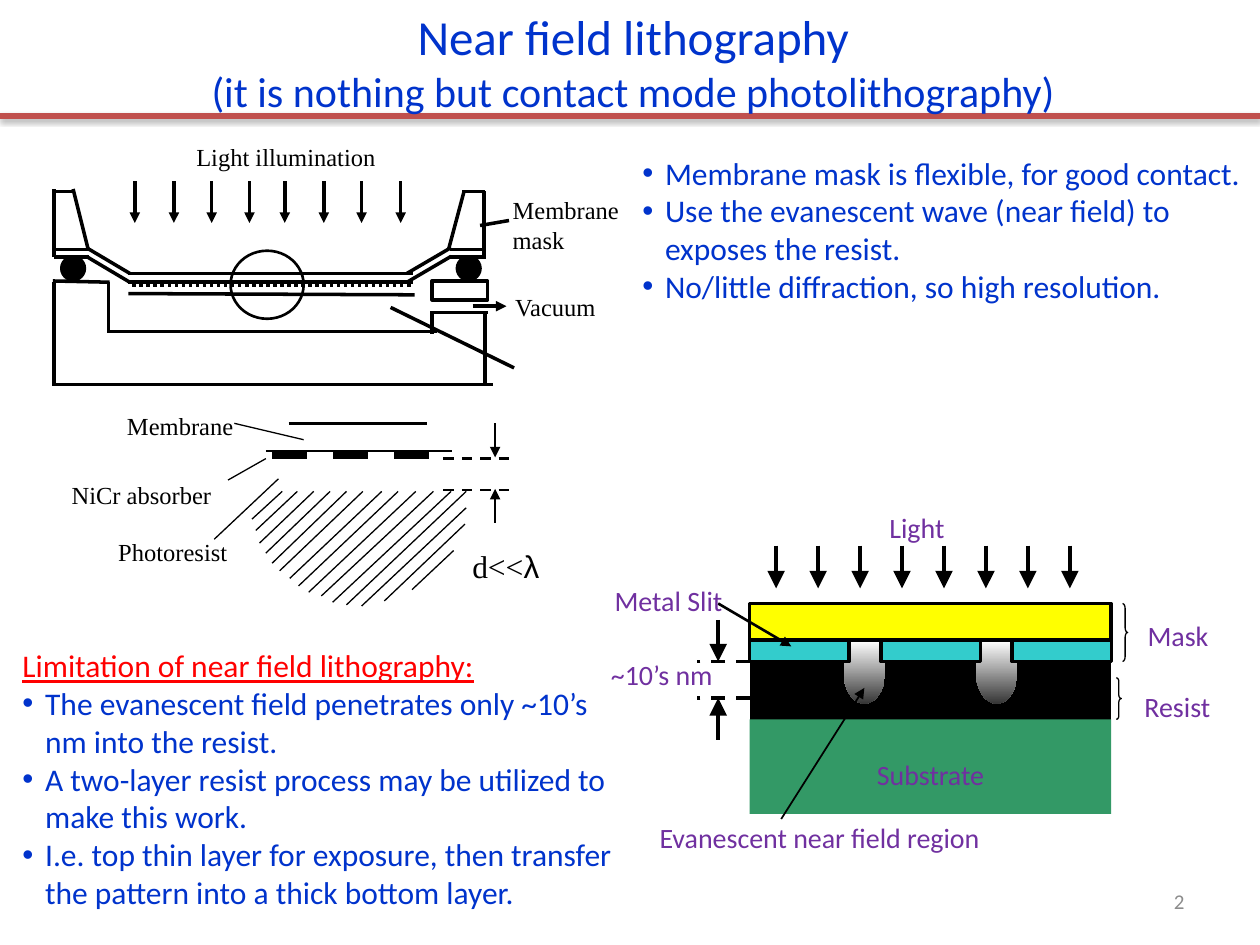
"""Builds the near field lithography slide on a grid of 100 columns by 75 rows."""
from lxml import etree
from pptx import Presentation
from pptx.dml.color import RGBColor
from pptx.enum.dml import MSO_LINE
from pptx.enum.shapes import MSO_CONNECTOR, MSO_SHAPE
from pptx.enum.text import MSO_ANCHOR, PP_ALIGN
from pptx.oxml.ns import qn
from pptx.util import Inches, Pt

RECT, OVAL = MSO_SHAPE.RECTANGLE, MSO_SHAPE.OVAL
DELAY, BRACE = MSO_SHAPE.FLOWCHART_DELAY, MSO_SHAPE.RIGHT_BRACE
STRAIGHT = MSO_CONNECTOR.STRAIGHT
DASH, DOT = MSO_LINE.DASH, MSO_LINE.ROUND_DOT
LEFT, CENTER, RIGHT, JUSTIFY = PP_ALIGN.LEFT, PP_ALIGN.CENTER, PP_ALIGN.RIGHT, PP_ALIGN.JUSTIFY
TOP, MIDDLE = MSO_ANCHOR.TOP, MSO_ANCHOR.MIDDLE

COLORS = {"black": "000000", "white": "FFFFFF", "blue": "0033CC", "purple": "7030A0",
          "red": "FF0000", "rule": "C0504D", "yellow": "FFFF00", "teal": "33CCCC",
          "green": "339966", "dark": "363636", "gray": "8C8C8C"}
SERIF = {"size": 14, "name": "Times New Roman", "color": "black"}
LABEL = {"size": 16, "name": "Calibri", "color": "purple"}
BODY = {"size": 18, "name": "Calibri", "color": "blue"}


def rgb(name):
    return RGBColor.from_string(COLORS[name])


class Sketch:
    """Draws styled elements on the current slide in grid units."""

    def __init__(self, prs, cols=100, rows=75):
        self.s = prs.slides.add_slide(prs.slide_layouts[6])
        self.cw, self.rh = prs.slide_width / cols, prs.slide_height / rows

    def grid(self, *values):
        return [round(v * (self.rh if i % 2 else self.cw)) for i, v in enumerate(values)]

    def line(self, *ends, width=2, color="black", dash=None, head=None, shadow=False):
        sp = self.s.shapes.add_connector(STRAIGHT, *self.grid(*ends))
        sp.line.width, sp.line.color.rgb = Pt(width), rgb(color)
        if dash:
            sp.line.dash_style = dash
        pr = sp._element.spPr
        if head:
            etree.SubElement(pr.find(qn("a:ln")), qn("a:tailEnd"), type="triangle", w=head, len=head)
        effects = etree.SubElement(pr, qn("a:effectLst"))
        if shadow:
            sh = etree.SubElement(effects, qn("a:outerShdw"), blurRad="40000", dist="20000",
                                  dir="5400000", rotWithShape="0")
            clr = etree.SubElement(sh, qn("a:srgbClr"), val=COLORS["black"])
            etree.SubElement(clr, qn("a:alpha"), val="38000")

    def lines(self, ends, **style):
        for e in ends:
            self.line(*e, **style)

    def shape(self, kind, *box, fill=None, width=None, rotation=0, adj=()):
        sp = self.s.shapes.add_shape(kind, *self.grid(*box))
        sp.shadow.inherit, sp.rotation = False, rotation
        for i, value in enumerate(adj):
            sp.adjustments[i] = value
        if isinstance(fill, tuple):
            sp.fill.gradient()
            sp.fill.gradient_angle = 0
            for stop, name in zip(sp.fill.gradient_stops, fill):
                stop.color.rgb = rgb(name)
        elif fill:
            sp.fill.solid()
            sp.fill.fore_color.rgb = rgb(fill)
        else:
            sp.fill.background()
        if width:
            sp.line.width, sp.line.color.rgb = Pt(width), rgb("black")
        else:
            sp.line.fill.background()

    def text(self, box, paragraphs, style, align=LEFT, wrap=True, anchor=TOP, bullets=False):
        tf = self.s.shapes.add_textbox(*self.grid(*box)).text_frame
        tf.word_wrap, tf.vertical_anchor = wrap, anchor
        for i, runs in enumerate(paragraphs):
            p = tf.add_paragraph() if i else tf.paragraphs[0]
            p.alignment = align
            for words, change in [(runs, {})] if isinstance(runs, str) else runs:
                r = p.add_run()
                r.text = words
                fmt = {**style, **change}
                r.font.color.rgb = rgb(fmt.pop("color"))
                fmt["size"] = Pt(fmt["size"])
                for key, value in fmt.items():
                    setattr(r.font, key, value)
            if bullets:
                pr = p._p.get_or_add_pPr()
                pr.set("marL", str(Inches(0.18)))
                pr.set("indent", str(-Inches(0.18)))
                if isinstance(runs, str):
                    etree.SubElement(pr, qn("a:buFont"), typeface="Arial")
                    etree.SubElement(pr, qn("a:buChar"), char="•")


def mask_detail(d):
    d.lines([(22.9, 33.6, 33.9, 33.6), (21.1, 35.8, 35.9, 35.8)], width=1.5)
    d.lines([(35.2, y, 40.6, y) for y in (36.4, 38.9)], width=1.5, dash=DASH)
    d.lines([(39.3, 41.5, 39.3, 38.8), (39.3, 33.6, 39.3, 36.3)], width=1.5, head="med")
    d.line(21.6, 36.1, 35.1, 36.1, width=5, dash=DASH)
    d.lines([(24.1, 34.9, 18.6, 33.6), (22.1, 38, 17, 42.8), (18.1, 38.1, 21.1, 36.4)], width=0.75)
    tops = (22.4, 23.6, 24.9, 26.2, 27.5, 28.8, 30.3, 31.6, 33, 34.4, 35.8, 37)
    feet = ((20, 41.2), (20.3, 42.1), (20.6, 43.1), (21.1, 43.9), (21.6, 44.7), (22.2, 45.3),
            (23, 45.9), (23.7, 46.5), (24.5, 47), (25.5, 47.3), (26.4, 47.8), (27.5, 48))
    d.lines([(x, 39, *foot) for x, foot in zip(tops, feet)], width=0.75)
    d.lines([(37, 40.3, 28.7, 48.1), (36.9, 41.6, 30.5, 47.7), (36, 43.7, 32.7, 46.8)], width=0.75)
    d.text((36.5, 42.9, 7.4, 4), [[("d<<", {}), ("λ", {"name": "Arial"})]], {**SERIF, "size": 18},
           wrap=False)


def exposure_setup(d):
    d.lines([(8.6, 26.3, 34.7, 26.3), (34.3, 26.5, 34.3, 24.7), (34.3, 24.8, 38.7, 24.8),
             (8.6, 26.4, 8.6, 22.4), (38.5, 24.8, 38.5, 30.6), (4.3, 22.4, 4.3, 30.6),
             (4.2, 22.3, 8.7, 22.4), (4.2, 30.5, 39.1, 30.5), (10.2, 23.3, 32.9, 23.4)])
    for y in (20.4, 19.7):
        edge = max(y, 19.8)
        d.lines([(10.2, y + 2, 32.8, y + 2), (32.3, y + 2, 35.8, y - 0.05),
                 (35.7, edge, 38.6, edge), (10.3, y + 2, 6.85, y - 0.05), (4.3, edge, 7.1, edge)])
    d.lines([(38.4, 20.4, 38.4, 15.2), (4.3, 20.4, 4.3, 15), (4.4, 15.2, 5.9, 15.2),
             (36.7, 15.2, 38.5, 15.2), (36.8, 15.3, 35.6, 19.8), (7, 19.8, 5.8, 15),
             (38.1, 17.9, 40.4, 17.5), (31, 24.4, 40.8, 29.2)])
    d.line(10.5, 22.6, 32.7, 22.6, dash=DOT)
    for x in (4.9, 36.3):
        d.shape(OVAL, x, 20.4, 1.8, 1.8, fill="black", width=2)
    d.shape(OVAL, 18.3, 19.9, 5.8, 5.4, width=1.5)
    d.shape(RECT, 34.3, 22.3, 4.4, 1.5, fill="white", width=2)
    d.line(37.5, 24.3, 40.2, 24.3, head="med")
    d.lines([(x, 14.4, x, 17.7) for x in (10.7, 13.8, 16.8, 19.8, 22.6, 25.7, 28.7, 31.8)], head="med")


def resist_stack(d):
    d.lines([(61.6 + 3.33 * i, 43.3, 61.6 + 3.33 * i, 46.7) for i in range(8)], head="lg")
    d.line(59.5, 55.4, 88.2, 55.4, width=42.5)
    d.lines([(59.5, y, 55.3, y) for y in (52.5, 55.4)], dash=DASH)
    d.lines([(57, 49.2, 57, 52.5), (57, 58.7, 57, 55.4)], head="lg")
    d.shape(RECT, 59.5, 57.1, 28.7, 7.5, fill="green")
    for x in (66.1, 76.6):
        d.shape(DELAY, x, 51.7, 5, 3.3, fill=("white", "dark"), rotation=90)
    d.line(62, 65, 68.6, 54.6, width=1, head="med")
    d.shape(RECT, 59.5, 47.9, 28.7, 2.9, fill="yellow", width=2)
    for x in (59.5, 69.9, 80.3):
        d.shape(RECT, x, 50.8, 7.9, 1.7, fill="teal", width=2)
    d.line(57, 47.9, 62.8, 51.3, width=1.5, head="med")
    d.shape(BRACE, 89.1, 47.9, 0.4, 4.6, width=0.75, adj=(0.92, 0.5))
    d.shape(BRACE, 88.6, 53.8, 0.4, 3.3, width=0.75, adj=(0.67, 0.5))


def words(d):
    for box, label in [((9.1, 32.1, 15.7, 5.2), "Membrane"), ((8.4, 42.1, 15.3, 6), "Photoresist"),
                       ((4.7, 37.6, 15.7, 5), "NiCr absorber"), ((39.9, 22.7, 8.9, 4.9), "Vacuum"),
                       ((39.7, 15, 12.1, 7.3), "Membrane mask"),
                       ((14.6, 10.8, 24.7, 4.2), "Light illumination")]:
        d.text(box, [label], SERIF, JUSTIFY)
    for box, label, align in [((69.6, 40, 8.2, 3.7), "Light", LEFT),
                              ((47.5, 51.7, 10.8, 3.7), "~10’s nm", LEFT),
                              ((47.8, 45.8, 11.6, 6.4), "Metal Slit", LEFT),
                              ((90.1, 48.6, 7.3, 3.7), "Mask", LEFT),
                              ((88.6, 54.2, 9.7, 3.7), "Resist", CENTER),
                              ((67.4, 59.6, 12.9, 3.7), "Substrate", CENTER),
                              ((51.1, 64.6, 27.9, 3.7), "Evanescent near field region", CENTER)]:
        d.text(box, [label], LABEL, align)
    d.text((15.5, 0, 69.5, 9.8),
           [[("Near field lithography", {"size": 28})],
            "(it is nothing but contact mode photolithography)"],
           {**BODY, "size": 24}, CENTER, wrap=False)
    d.text((50, 11.7, 50, 13.1),
           ["Membrane mask is flexible, for good contact.",
            "Use the evanescent wave (near field) to exposes the resist.",
            "No/little diffraction, so high resolution."], BODY, bullets=True)
    d.text((0.8, 50.8, 49.2, 22.2),
           [[("Limitation of near field lithography:", {"color": "red", "underline": True})],
            "The evanescent field penetrates only ~10’s nm into the resist.",
            "A two-layer resist process may be utilized to make this work.",
            "I.e. top thin layer for exposure, then transfer the pattern into a thick bottom layer."],
           BODY, bullets=True)
    d.text((71.7, 69.5, 23.3, 4), ["2"], {**BODY, "size": 12, "color": "gray"}, RIGHT, anchor=MIDDLE)


def main():
    prs = Presentation()
    prs.slide_width, prs.slide_height = Inches(10), Inches(7.5)
    d = Sketch(prs)
    mask_detail(d)
    exposure_setup(d)
    d.line(0, 9.2, 100, 9.2, width=3, color="rule", shadow=True)
    resist_stack(d)
    words(d)
    prs.save("out.pptx")


if __name__ == "__main__":
    main()
